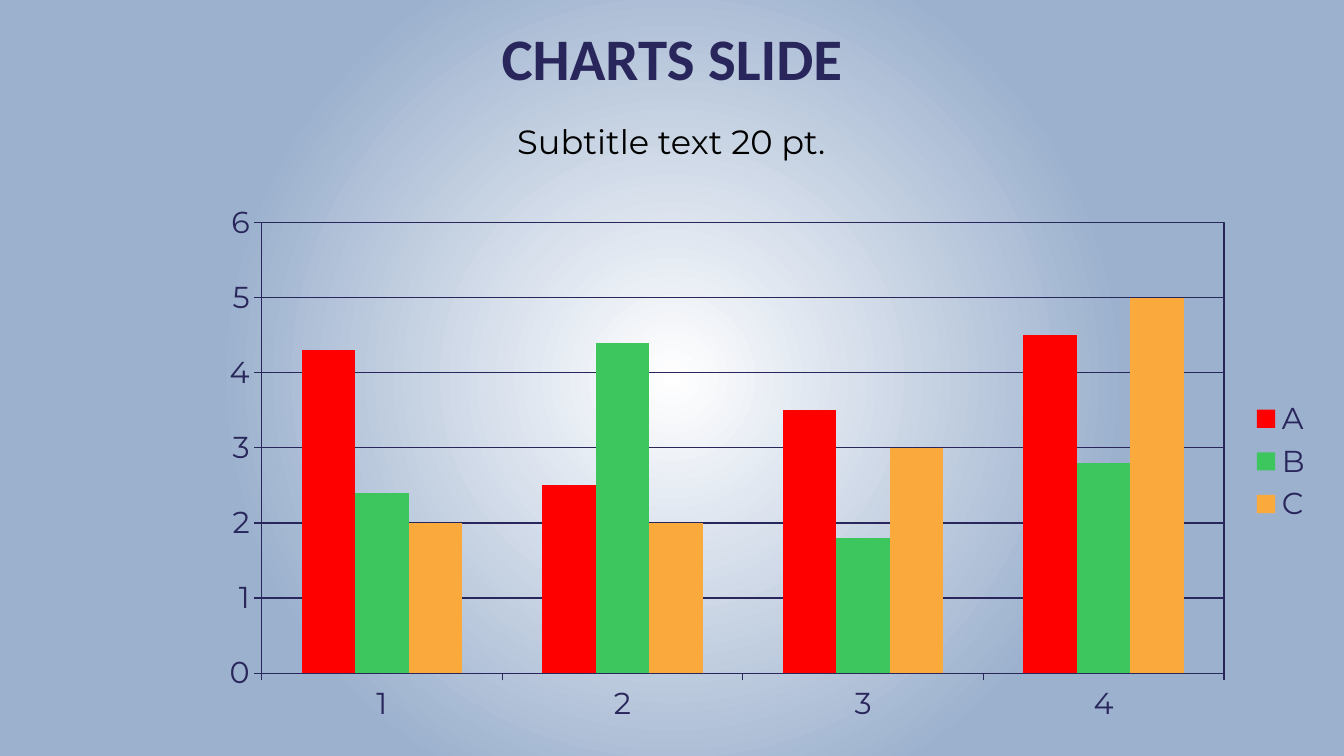
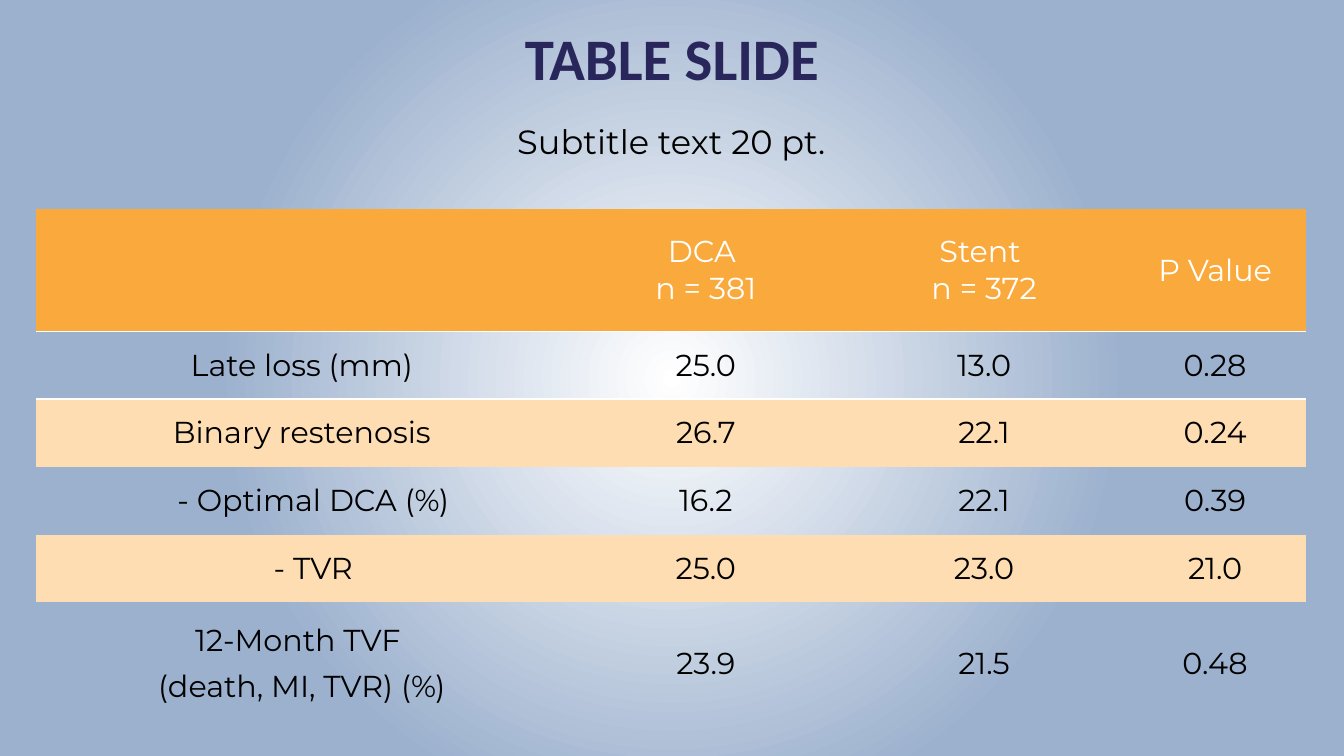
from lxml import etree
from pptx import Presentation
from pptx.chart import data
from pptx.dml import color
from pptx.enum import chart as charts, text
from pptx.oxml import ns, parse_xml
from pptx.util import Inches, Pt

NAVY, BLACK, WHITE = "29265B", "000000", "FFFFFF"
RED, GREEN, ORANGE, PEACH, BLUE = "FF0000", "3EC65E", "FAAA3C", "FDDDB1", "9CB1CE"
HEAD, BODY = "Calibri", "Montserrat"
PLAIN = "{2D5ABB26-0587-4C30-8999-92F81FD0307C}"  # no style, no grid


def rgb(code):
    return color.RGBColor.from_string(code)


def put(item, **values):
    for name, value in values.items():
        setattr(item, name, value)


def style(font, face, size, code, bold=False):
    put(font, name=face, size=Pt(size), bold=bold)
    font.color.rgb = rgb(code)


def stroke(line, code=NAVY, width=0.75):
    line.color.rgb = rgb(code)
    line.width = Pt(width)


def edge(cell, tag):
    """Draw a white rule on one side of a cell (lnT or lnB)."""
    cell._tc.get_or_add_tcPr().insert(0, parse_xml(
        f'<a:{tag} {ns.nsdecls("a")} w="12700"><a:solidFill>'
        f'<a:srgbClr val="{WHITE}"/></a:solidFill></a:{tag}>'))


class Deck:
    def __init__(self):
        self.prs = Presentation()
        put(self.prs, slide_width=Inches(11.11), slide_height=Inches(6.25))
        self.slide = None
        self.glow()

    def glow(self):
        """Give the master a round white-to-blue background."""
        master = self.prs.slide_master
        fill = master.background.fill
        fill.gradient()
        for stop, (place, code) in zip(fill.gradient_stops, [(0, WHITE), (0.59, BLUE)]):
            stop.position = place
            stop.color.rgb = rgb(code)
        grad = master.element.find(".//" + ns.qn("a:gradFill"))
        grad.replace(grad.find(ns.qn("a:lin")), parse_xml(
            f'<a:path {ns.nsdecls("a")} path="circle">'
            '<a:fillToRect l="50000" t="50000" r="50000" b="50000"/></a:path>'))

    def page(self, title):
        self.slide = self.prs.slides.add_slide(self.prs.slide_layouts[6])
        self.label(title, (0, 0.21, 11.11, 0.59), 0.05,
                   text.MSO_ANCHOR.MIDDLE, (HEAD, 35, NAVY, True))
        self.label("Subtitle text 20 pt.", (0.3, 0.99, 10.5, 0.4), 0.1,
                   text.MSO_ANCHOR.TOP, (BODY, 20, BLACK))

    def label(self, words, box, side, anchor, look):
        frame = self.slide.shapes.add_textbox(*map(Inches, box)).text_frame
        put(frame, word_wrap=True, vertical_anchor=anchor, text=words,
            margin_left=Inches(side), margin_right=Inches(side),
            margin_top=Inches(0.05), margin_bottom=Inches(0.05))
        par = frame.paragraphs[0]
        put(par, alignment=text.PP_ALIGN.CENTER, line_spacing=0.9)
        style(par.runs[0].font, *look)

    def chart(self, box, cats, series):
        source = data.CategoryChartData()
        source.categories = cats
        for name, _, vals in series:
            source.add_series(name, vals)
        chart = self.slide.shapes.add_chart(
            charts.XL_CHART_TYPE.COLUMN_CLUSTERED, *map(Inches, box), source).chart
        put(chart, has_title=False, has_legend=True)
        style(chart.font, BODY, 18, NAVY)
        put(chart.legend, position=charts.XL_LEGEND_POSITION.RIGHT,
            include_in_layout=False)
        style(chart.legend.font, BODY, 18, NAVY)
        plot = chart.plots[0]
        put(plot, gap_width=150, overlap=0, vary_by_categories=False)
        for bars, (_, code, _) in zip(plot.series, series):
            bars.format.fill.solid()
            bars.format.fill.fore_color.rgb = rgb(code)
        for axis in (chart.category_axis, chart.value_axis):
            axis.major_tick_mark = charts.XL_TICK_MARK.OUTSIDE
            stroke(axis.format.line)
            style(axis.tick_labels.font, BODY, 18, NAVY)
        put(chart.value_axis, minimum_scale=0, maximum_scale=6, major_unit=1,
            has_major_gridlines=True)
        stroke(chart.value_axis.major_gridlines.format.line)
        self.frame(chart)

    def frame(self, chart):
        """Place the plot area and outline it."""
        area = chart._chartSpace.find(".//" + ns.qn("c:plotArea"))
        for old in area.findall(ns.qn("c:layout")):
            area.remove(old)
        layout = parse_xml(f'<c:layout {ns.nsdecls("c")}><c:manualLayout/></c:layout>')
        parts = {"layoutTarget": "inner", "xMode": "edge", "yMode": "edge",
                 "x": "0.05", "y": "0.06", "w": "0.86", "h": "0.83"}
        for tag, value in parts.items():
            etree.SubElement(layout[0], ns.qn("c:" + tag)).set("val", value)
        area.insert(0, layout)
        area.append(parse_xml(
            f'<c:spPr {ns.nsdecls("c", "a")}><a:noFill/><a:ln w="9525"><a:solidFill>'
            f'<a:srgbClr val="{NAVY}"/></a:solidFill></a:ln></c:spPr>'))

    def table(self, box, widths, heights, rows):
        table = self.slide.shapes.add_table(
            len(rows), len(widths), *map(Inches, box)).table
        put(table, first_row=False, horz_banding=False)
        table._tbl.tblPr.find(ns.qn("a:tableStyleId")).text = PLAIN
        for col, width in zip(table.columns, widths):
            col.width = Inches(width)
        for r, (row, height) in enumerate(zip(rows, heights)):
            table.rows[r].height = Inches(height)
            for c, words in enumerate(row):
                self.cell(table.cell(r, c), words, r)

    def cell(self, cell, words, row):
        put(cell, text=words, vertical_anchor=text.MSO_ANCHOR.MIDDLE,
            margin_left=Inches(0.11), margin_right=Inches(0.11),
            margin_top=Inches(0.06), margin_bottom=Inches(0.06))
        for i, par in enumerate(cell.text_frame.paragraphs):
            par.alignment = text.PP_ALIGN.CENTER
            if i:
                par.space_before = Pt(5.4)
            if words.startswith("- "):
                par._p.get_or_add_pPr().set("marL", str(Inches(0.19)))
            style(par.font, BODY, 18, BLACK if row else WHITE)
            for run in par.runs:
                style(run.font, BODY, 18, BLACK if row else WHITE)
        if row % 2:
            cell.fill.background()
        elif row < 5:
            cell.fill.solid()
            cell.fill.fore_color.rgb = rgb(PEACH if row else ORANGE)
        if row < 2:
            edge(cell, "lnT" if row else "lnB")


def main():
    deck = Deck()
    deck.page("CHARTS SLIDE")
    deck.chart((1.7, 1.57, 9.25, 4.49), ["1", "2", "3", "4"], [
        ("A", RED, (4.3, 2.5, 3.5, 4.5)),
        ("B", GREEN, (2.4, 4.4, 1.8, 2.8)),
        ("C", ORANGE, (2, 2, 3, 5))])
    deck.page("TABLE SLIDE")
    deck.table((0.3, 1.73, 10.5, 4.26), (4.39, 2.29, 2.31, 1.51),
               (1.01, 0.56, 0.56, 0.56, 0.56, 1.01), [
        ("", "DCA \vn = 381", "Stent \vn = 372", "P Value"),
        ("Late loss (mm)", "25.0", "13.0", "0.28"),
        ("Binary restenosis", "26.7", "22.1", "0.24"),
        ("- Optimal DCA (%)", "16.2", "22.1", "0.39"),
        ("- TVR", "25.0", "23.0", "21.0"),
        ("12-Month TVF \n(death, MI, TVR) (%)", "23.9", "21.5", "0.48")])
    deck.prs.save("out.pptx")


if __name__ == "__main__":
    main()
